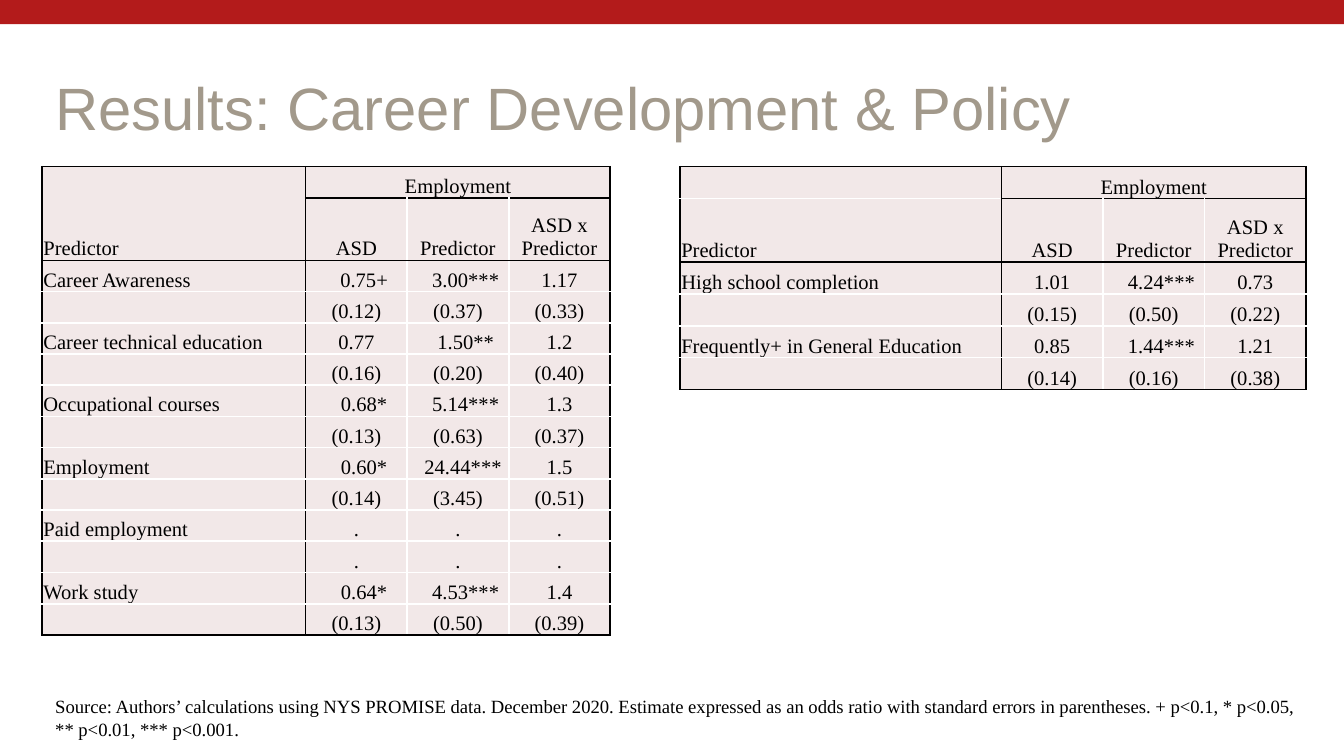
from lxml.etree import SubElement as Sub
from pptx import Presentation
from pptx.dml.color import RGBColor as RGB
from pptx.enum.shapes import MSO_SHAPE as Shape
from pptx.enum.text import MSO_ANCHOR as Anchor, PP_ALIGN as Align
from pptx.oxml.ns import qn
from pptx.util import Pt

HUES = {"bar": "B31B1B", "title": "A2998B", "cell": "F2E8E8",
        "ink": "000000", "rule": "FFFFFF"}
SERIF = "Times New Roman"
TITLE = {"name": "Arial", "size": Pt(32)}
NOTE = {"name": SERIF, "size": Pt(10)}
BODY = {"name": SERIF, "size": Pt(11)}
INSET = {"margin_left": Pt(0.75), "margin_right": Pt(0.75),
         "margin_top": Pt(0.75), "margin_bottom": Pt(0),
         "vertical_anchor": Anchor.BOTTOM}
PLAIN = {"first_row": False, "horz_banding": False}

TOP = ["", "Employment", "", ""]
HEAD = ["Predictor", "ASD", "Predictor", "ASD x Predictor"]
# Each predictor: label, odds ratios, standard errors
CAREER = [
    ("Career Awareness", ["0.75+", "3.00***", "1.17"], ["(0.12)", "(0.37)", "(0.33)"]),
    ("Career technical education", ["0.77", "1.50**", "1.2"], ["(0.16)", "(0.20)", "(0.40)"]),
    ("Occupational courses", ["0.68*", "5.14***", "1.3"], ["(0.13)", "(0.63)", "(0.37)"]),
    ("Employment", ["0.60*", "24.44***", "1.5"], ["(0.14)", "(3.45)", "(0.51)"]),
    ("Paid employment", [".", ".", "."], [".", ".", "."]),
    ("Work study", ["0.64*", "4.53***", "1.4"], ["(0.13)", "(0.50)", "(0.39)"]),
]
POLICY = [
    ("High school completion", ["1.01", "4.24***", "0.73"], ["(0.15)", "(0.50)", "(0.22)"]),
    ("Frequently+ in General Education", ["0.85", "1.44***", "1.21"],
     ["(0.14)", "(0.16)", "(0.38)"]),
]
SOURCE = ("Source: Authors’ calculations using NYS PROMISE data. December 2020. "
          "Estimate expressed as an odds ratio with standard errors in parentheses. "
          "+ p<0.1, * p<0.05, ** p<0.01, *** p<0.001.")


def assign(item, values):
    for key, value in values.items():
        setattr(item, key, value)


def paint(fill, hue):
    fill.solid()
    fill.fore_color.rgb = RGB.from_string(HUES[hue])


def write(para, text, style, hue):
    run = para.add_run()
    run.text = text
    assign(run.font, style)
    run.font.color.rgb = RGB.from_string(HUES[hue])


def add_bar(slide):
    bar = slide.shapes.add_shape(Shape.RECTANGLE, 0, 0, Pt(720), Pt(13))
    bar.shadow.inherit = False
    paint(bar.fill, "bar")
    bar.line.fill.background()


def add_text(slide, text, top, height, style, hue, anchor):
    box = slide.shapes.add_textbox(Pt(22.5), Pt(top), Pt(683), Pt(height))
    frame = box.text_frame
    assign(frame, {"word_wrap": True, "vertical_anchor": anchor})
    write(frame.paragraphs[0], text, style, hue)


def add_edges(cell, edges):
    """Draw 1 pt cell borders; edges maps L, R, T, B to True for black."""
    props = cell._tc.get_or_add_tcPr()
    for side, dark in edges.items():
        line = Sub(props, qn("a:ln" + side), w=str(Pt(1)))
        fill = Sub(line, qn("a:solidFill"))
        Sub(fill, qn("a:srgbClr"), val=HUES["ink" if dark else "rule"])


def fill_cell(cell, text, label):
    assign(cell, INSET)
    para = cell.text_frame.paragraphs[0]
    if not label:
        para.alignment = Align.CENTER
    if text:
        write(para, text, BODY, "ink")
    else:
        Sub(para._p, qn("a:endParaRPr"), sz="1100")
    if not label and text[-1:] in ("*", "+"):
        # Offset for the significance mark, so the digits line up
        cell.margin_left = Pt(6.25 if len(text) > 7 else 9)
    paint(cell.fill, "cell")


def add_results(slide, left, widths, step, head, data, merge):
    """Table of results; merge joins the two header cells above the labels."""
    rows = [TOP, HEAD]
    for label, odds, errors in data:
        rows += [[label, *odds], ["", *errors]]
    if merge:
        rows[:2] = [["Predictor", *TOP[1:]], ["", *HEAD[1:]]]
    tall, wide = len(rows), len(widths)
    heights = [step, head] + [step] * (tall - 2)
    table = slide.shapes.add_table(tall, wide, Pt(left), Pt(89.25),
                                   Pt(sum(widths)), Pt(sum(heights))).table
    assign(table, PLAIN)
    for col, width in zip(table.columns, widths):
        col.width = Pt(width)
    for row, height in zip(table.rows, heights):
        row.height = Pt(height)

    for y, row in enumerate(rows):
        for x, text in enumerate(row):
            def level(edge):
                return edge in (0, 2, tall) or edge == 1 and (x > 0 or merge)

            def upright(edge):
                return edge in (0, 1, wide) or y == 0

            cell = table.cell(y, x)
            add_edges(cell, {"L": upright(x), "R": upright(x + 1),
                             "T": level(y), "B": level(y + 1)})
            fill_cell(cell, text, x == 0)
    table.cell(0, 1).merge(table.cell(0, 3))
    if merge:
        table.cell(0, 0).merge(table.cell(1, 0))


def main():
    deck = Presentation()
    assign(deck, {"slide_width": Pt(720), "slide_height": Pt(405)})
    slide = deck.slides.add_slide(deck.slide_layouts[6])
    add_bar(slide)
    add_text(slide, "Results: Career Development & Policy", 36.75, 40.5,
             TITLE, "title", Anchor.MIDDLE)
    add_results(slide, 22.5, [141.25] + [54.4] * 3, 16.75, 33.5, CAREER, True)
    add_text(slide, SOURCE, 368.75, 31.5, NOTE, "ink", Anchor.TOP)
    add_results(slide, 364.25, [172.25] + [54.4] * 3, 17.1, 34, POLICY, False)
    deck.save("out.pptx")


if __name__ == "__main__":
    main()
